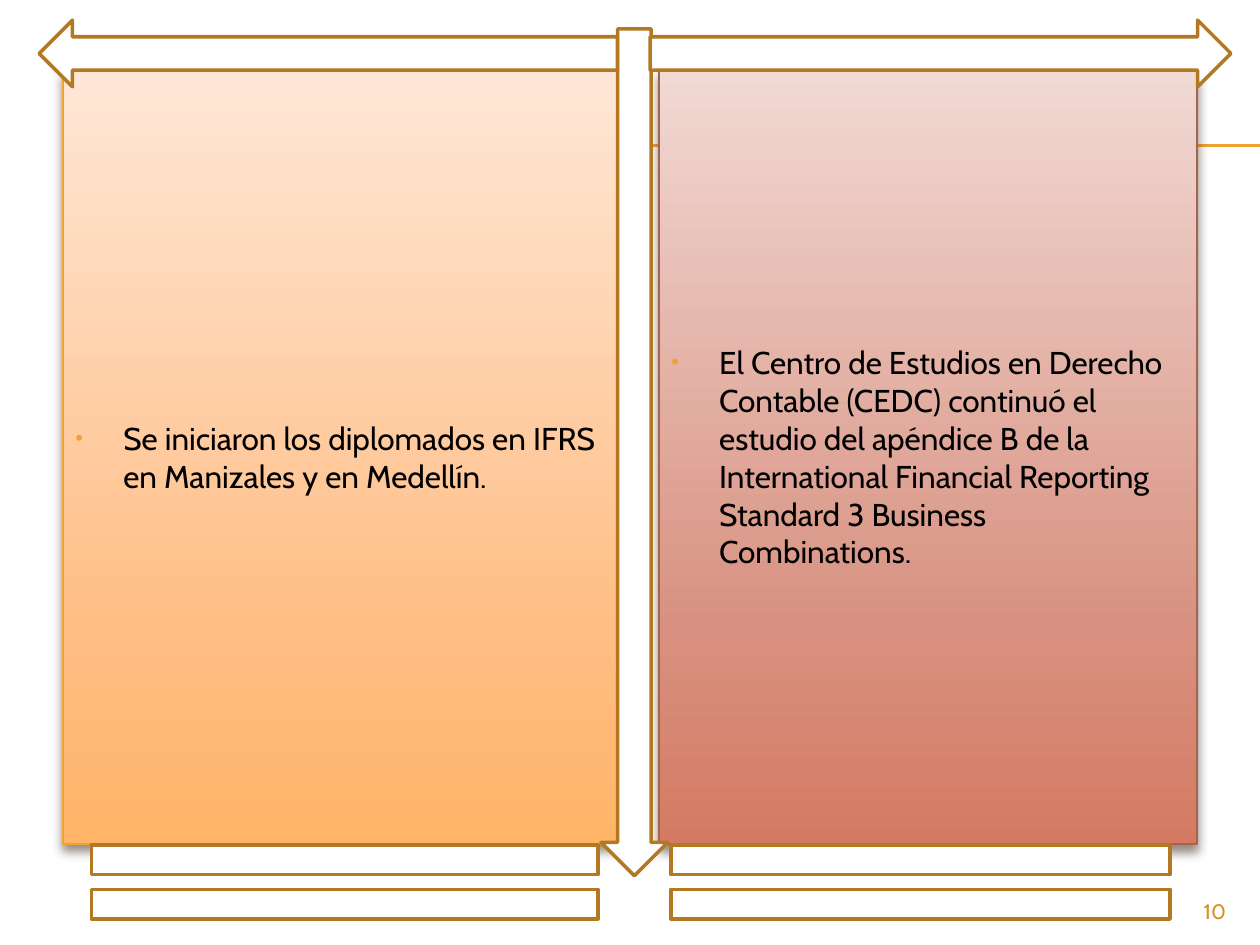
from dataclasses import dataclass

from lxml.etree import SubElement
from pptx import Presentation
from pptx.dml.color import RGBColor
from pptx.enum.shapes import MSO_CONNECTOR as Connector, MSO_SHAPE as Preset
from pptx.enum.text import MSO_ANCHOR as Anchor, PP_ALIGN as Align
from pptx.oxml.ns import qn
from pptx.shapes.autoshape import Shape
from pptx.slide import Slide
from pptx.text.text import _Paragraph as Paragraph
from pptx.util import Inches, Pt


@dataclass(frozen=True)
class Theme:
    font: str = "Cabin"
    accent: str = "F0A22E"
    red: str = "A5644E"
    outline: str = "B27822"
    number: str = "D48F29"
    shadow: str = "4E3B30"
    ink: str = "000000"
    white: str = "FFFFFF"
    body_size: float = 18
    number_size: float = 12
    rule_width: float = 0.75
    panel_width: float = 0.79
    outline_width: float = 2


THEME = Theme()


@dataclass(frozen=True)
class Panel:
    left: float
    width: float
    colors: tuple[str, str, str]
    border: str
    text: str


@dataclass(frozen=True)
class Symbol:
    preset: Preset
    left: float
    top: float
    width: float
    height: float


PANEL_TOP, PANEL_HEIGHT = 0.55, 6.15
GRADIENT_STOPS = (0, 72, 100)
RULE_LEFT, RULE_RIGHT = 0.56, 10
RULE_HEIGHTS = (1.15, 1.16)

PANELS = (
    Panel(0.5, 4.42, ("FFE7D7", "FFBE84", "FFB468"), THEME.accent,
          "Se iniciaron los diplomados en IFRS en Manizales y en Medellín."),
    Panel(5.23, 4.27, ("F1D9D4", "D89180", "D47A62"), THEME.red,
          "El Centro de Estudios en Derecho Contable (CEDC) continuó el estudio "
          "del apéndice B de la International Financial Reporting Standard 3 "
          "Business Combinations."),
)

SYMBOLS = (
    Symbol(Preset.DOWN_ARROW, 4.77, 0.23, 0.53, 6.72),
    Symbol(Preset.RIGHT_ARROW, 5.16, 0.16, 4.61, 0.53),
    Symbol(Preset.LEFT_ARROW, 0.31, 0.16, 4.59, 0.53),
    Symbol(Preset.MATH_EQUAL, 0, 6.5, 5.47, 1),
    Symbol(Preset.MATH_EQUAL, 4.61, 6.5, 5.39, 1),
)


def rgb(color: str) -> RGBColor:
    return RGBColor.from_string(color)


def add_preset(page: Slide, preset: Preset, left: float, top: float, width: float,
               height: float, border: str, border_width: float) -> Shape:
    box = page.shapes.add_shape(preset, Inches(left), Inches(top),
                                Inches(width), Inches(height))
    box.shadow.inherit = False
    box.line.color.rgb = rgb(border)
    box.line.width = Pt(border_width)
    return box


def add_span(para: Paragraph, text: str, size: float, color: str) -> None:
    span = para.add_run()
    span.text = text
    span.font.name = THEME.font
    span.font.size = Pt(size)
    span.font.color.rgb = rgb(color)


def fill_gradient(box: Shape, colors: tuple[str, ...]) -> None:
    """Fill from top to bottom through the given colours."""
    box.fill.gradient()
    box.fill.gradient_angle = 270
    stops = box.element.spPr.find(qn("a:gradFill")).find(qn("a:gsLst"))
    for old_stop in list(stops):
        stops.remove(old_stop)
    for position, color in zip(GRADIENT_STOPS, colors):
        stop = SubElement(stops, qn("a:gs"), pos=str(position * 1000))
        SubElement(stop, qn("a:srgbClr"), val=color)


def add_shadow(box: Shape) -> None:
    effects = box.element.spPr.find(qn("a:effectLst"))
    shadow = SubElement(effects, qn("a:outerShdw"), blurRad=str(Pt(6)),
                        dist=str(Pt(4)), dir="5400000", rotWithShape="0")
    color = SubElement(shadow, qn("a:srgbClr"), val=THEME.shadow)
    SubElement(color, qn("a:alpha"), val="60000")


def add_bullet(para: Paragraph) -> None:
    indent = Inches(0.38)
    props = para._p.get_or_add_pPr()
    props.set("marL", str(indent))
    props.set("indent", str(-indent))
    color = SubElement(props, qn("a:buClr"))
    SubElement(color, qn("a:srgbClr"), val=THEME.accent)
    SubElement(props, qn("a:buSzPct"), val="70000")
    SubElement(props, qn("a:buFont"), typeface="Arial")
    SubElement(props, qn("a:buChar"), char="•")


def add_panel(page: Slide, panel: Panel) -> None:
    box = add_preset(page, Preset.RECTANGLE, panel.left, PANEL_TOP, panel.width,
                     PANEL_HEIGHT, panel.border, THEME.panel_width)
    fill_gradient(box, panel.colors)
    add_shadow(box)
    frame = box.text_frame
    frame.word_wrap = True
    frame.vertical_anchor = Anchor.MIDDLE
    para = frame.paragraphs[0]
    para.alignment = Align.LEFT
    para.space_before = Pt(0.2 * THEME.body_size)
    add_bullet(para)
    add_span(para, panel.text, THEME.body_size, THEME.ink)


def add_symbol(page: Slide, symbol: Symbol) -> None:
    box = add_preset(page, symbol.preset, symbol.left, symbol.top, symbol.width,
                     symbol.height, THEME.outline, THEME.outline_width)
    box.fill.solid()
    box.fill.fore_color.rgb = rgb(THEME.white)


def add_rule(page: Slide, height: float) -> None:
    rule = page.shapes.add_connector(Connector.STRAIGHT, Inches(RULE_LEFT), Inches(height),
                                     Inches(RULE_RIGHT), Inches(height))
    rule.line.color.rgb = rgb(THEME.accent)
    rule.line.width = Pt(THEME.rule_width)
    SubElement(rule.element.spPr, qn("a:effectLst"))


def add_page_number(page: Slide, number: str) -> None:
    box = page.shapes.add_textbox(Inches(9), Inches(7.08), Inches(0.83), Inches(0.27))
    box.text_frame.word_wrap = True
    para = box.text_frame.paragraphs[0]
    para.alignment = Align.RIGHT
    add_span(para, number, THEME.number_size, THEME.number)


def main() -> None:
    deck = Presentation()
    deck.slide_width, deck.slide_height = Inches(10), Inches(7.5)
    page = deck.slides.add_slide(deck.slide_layouts[6])
    for height in RULE_HEIGHTS:
        add_rule(page, height)
    for panel in PANELS:
        add_panel(page, panel)
    for symbol in SYMBOLS:
        add_symbol(page, symbol)
    add_page_number(page, "10")
    deck.save("out.pptx")


if __name__ == "__main__":
    main()
